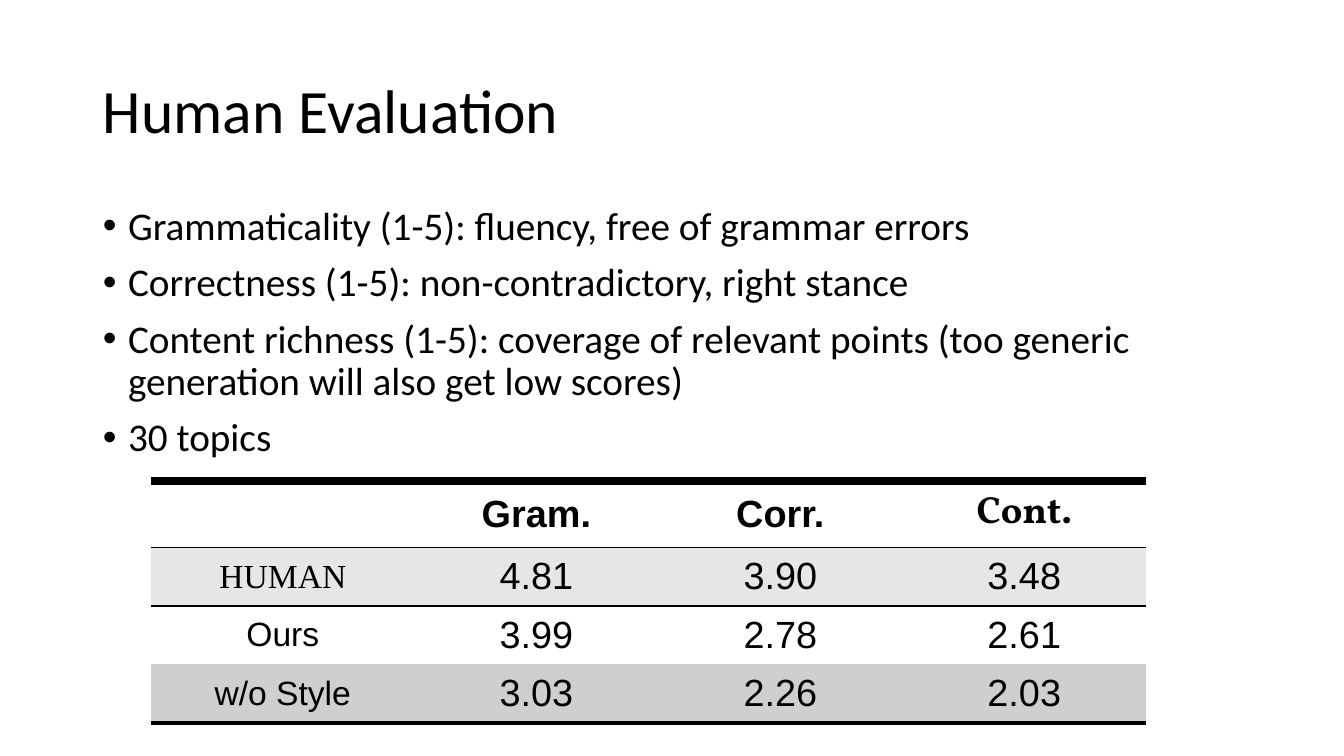
import pptx
import pptx.util
import pptx.dml.color
import pptx.enum.text
import pptx.oxml
import pptx.oxml.ns
from pptx.util import Inches

COLORS = {"text": "000000", "line": "000000", "light": "E7E6E6", "dark": "D0CECE"}
ALIGN = pptx.enum.text.PP_ALIGN
ANCHOR = pptx.enum.text.MSO_ANCHOR


def write_text(paragraph, text, size, font="Calibri", bold=False, align=ALIGN.LEFT, spacing=1.0, before=0):
    paragraph.alignment = align
    paragraph.line_spacing = spacing
    paragraph.space_before = pptx.util.Pt(before)
    run = paragraph.add_run()
    run.text = text
    run.font.size = pptx.util.Pt(size)
    run.font.name = font
    run.font.bold = bold
    run.font.color.rgb = pptx.dml.color.RGBColor.from_string(COLORS["text"])


def add_border(cell, side, width):
    cell._tc.get_or_add_tcPr().append(pptx.oxml.parse_xml(
        f'<a:{side} {pptx.oxml.ns.nsdecls("a")} w="{pptx.util.Pt(width)}"><a:solidFill>'
        f'<a:srgbClr val="{COLORS["line"]}"/></a:solidFill><a:prstDash val="solid"/></a:{side}>'))


presentation = pptx.Presentation()
presentation.slide_width = Inches(13.33)
presentation.slide_height = Inches(7.5)
slide = presentation.slides.add_slide(presentation.slide_layouts[1])

title = slide.shapes.title
body = slide.placeholders[1]
for shape, top, height, anchor in [(title, 0.4, 1.45, ANCHOR.MIDDLE), (body, 2, 4.76, ANCHOR.TOP)]:
    shape.left, shape.top = Inches(0.92), Inches(top)
    shape.width, shape.height = Inches(11.5), Inches(height)
    shape.text_frame.vertical_anchor = anchor
    shape.text_frame.word_wrap = True
    shape.text_frame.auto_size = pptx.enum.text.MSO_AUTO_SIZE.NONE

write_text(title.text_frame.paragraphs[0], "Human Evaluation", 44, spacing=0.9)

criteria = [
    "Grammaticality (1-5): fluency, free of grammar errors",
    "Correctness (1-5): non-contradictory, right stance",
    "Content richness (1-5): coverage of relevant points (too generic generation will also get low scores)",
    "30 topics",
]
for index, criterion in enumerate(criteria):
    paragraph = body.text_frame.add_paragraph() if index else body.text_frame.paragraphs[0]
    write_text(paragraph, criterion, 28, spacing=0.9, before=10)
    properties = paragraph._p.get_or_add_pPr()
    properties.set("marL", str(Inches(0.25)))
    properties.set("indent", str(Inches(-0.25)))

scores = [
    ["", "Gram.", "Corr.", "Cont."],
    ["HUMAN", "4.81", "3.90", "3.48"],
    ["Ours", "3.99", "2.78", "2.61"],
    ["w/o Style", "3.03", "2.26", "2.03"],
]
row_fills = [None, "light", None, "dark"]
row_borders = [{"lnT": 6, "lnB": 1.5}, {"lnT": 1.5}, {}, {"lnB": 3}]
special_fonts = {"Cont.": "Vollkorn", "HUMAN": "Times New Roman"}

table = slide.shapes.add_table(4, 4, Inches(1.5), Inches(4.77), Inches(9.87), Inches(2.33)).table
table.first_row = False
table.horz_banding = False
style = table._tbl.tblPr.find(pptx.oxml.ns.qn("a:tableStyleId"))
style.text = "{2D5ABB26-0587-4C30-8999-92F81FD0307C}"
for column, width in zip(table.columns, [2.61, 2.42, 2.42, 2.42]):
    column.width = Inches(width)

for row_index, labels in enumerate(scores):
    table.rows[row_index].height = Inches(0.58)
    for column_index, label in enumerate(labels):
        cell = table.cell(row_index, column_index)
        cell.vertical_anchor = ANCHOR.MIDDLE
        cell.margin_left = cell.margin_right = Inches(0.13)
        cell.margin_top = cell.margin_bottom = Inches(0.07)
        for side, width in row_borders[row_index].items():
            add_border(cell, side, width)
        if row_fills[row_index]:
            cell.fill.solid()
            cell.fill.fore_color.rgb = pptx.dml.color.RGBColor.from_string(COLORS[row_fills[row_index]])
        else:
            cell.fill.background()
        if label:
            write_text(cell.text_frame.paragraphs[0], label, 27 if column_index else 24,
                       font=special_fonts.get(label, "Arial"), bold=row_index == 0, align=ALIGN.CENTER)

presentation.save("out.pptx")
